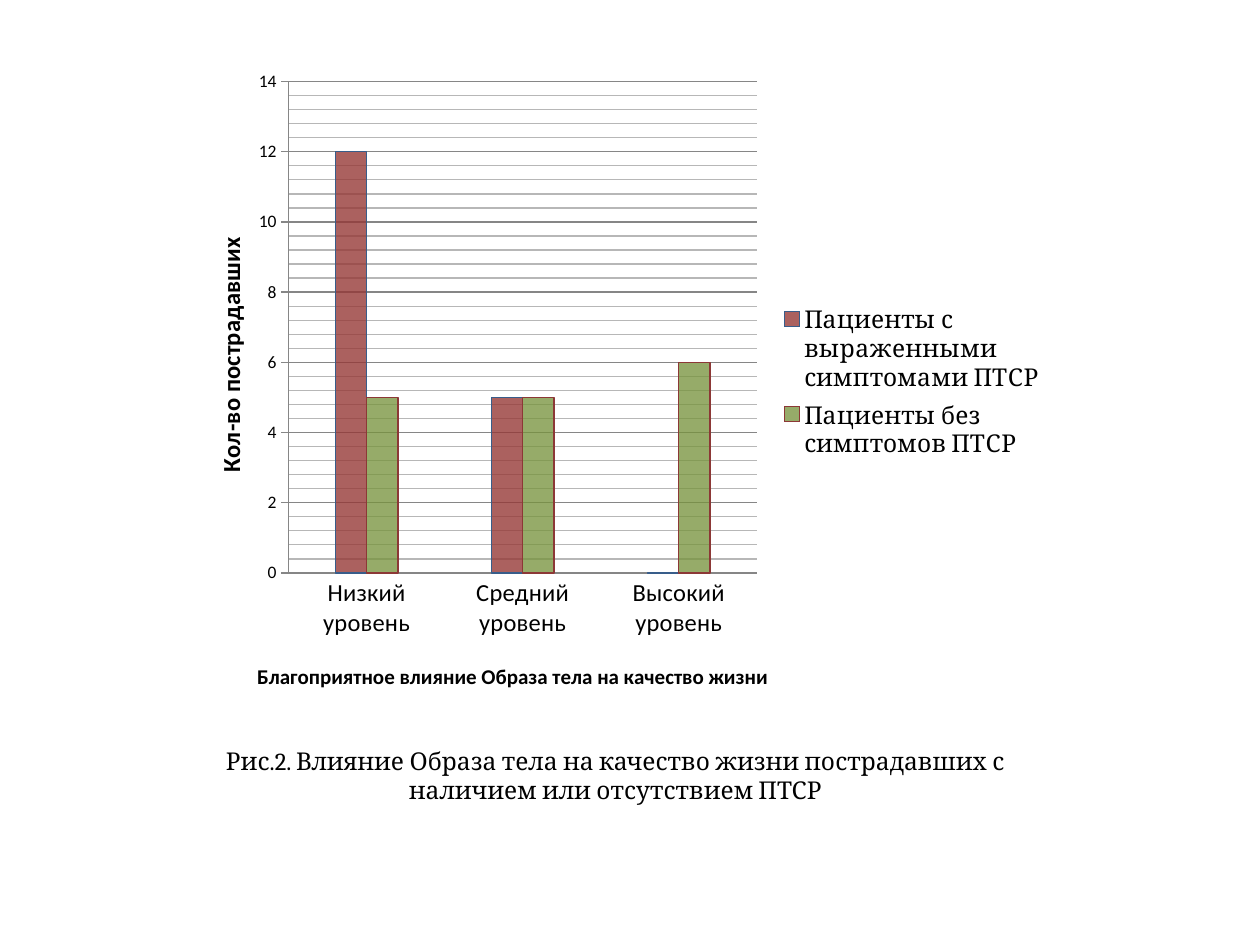
from dataclasses import dataclass

from lxml.etree import SubElement
from pptx import Presentation
from pptx.chart.data import CategoryChartData
from pptx.dml.color import RGBColor
from pptx.enum.chart import XL_CHART_TYPE as ChartType
from pptx.enum.chart import XL_LEGEND_POSITION as LegendPosition
from pptx.enum.chart import XL_TICK_MARK as TickMark
from pptx.enum.text import MSO_ANCHOR, PP_ALIGN
from pptx.oxml.ns import qn
from pptx.util import Inches, Pt

BLACK = "000000"
AXIS_GREY = "868686"
MINOR_GREY = "B7B7B7"
LEVELS = ["Низкий уровень", "Средний уровень", "Высокий уровень"]
CAPTION = "Рис.2. Влияние Образа тела на качество жизни пострадавших с наличием или отсутствием ПТСР"


@dataclass
class PatientGroup:
    name: str
    counts: tuple
    fill: str
    opacity: int
    outline: str


GROUPS = [
    PatientGroup("Пациенты с выраженными симптомами ПТСР", (12, 5, 0), "953735", 79, "385D8A"),
    PatientGroup("Пациенты без симптомов ПТСР", (5, 5, 6), "77933C", 77, "8C3836"),
]


def color(value: str) -> RGBColor:
    return RGBColor.from_string(value)


def set_font(font, size: float, name: str = "Calibri", bold: bool = False) -> None:
    for attribute, value in {"size": Pt(size), "name": name, "bold": bold}.items():
        setattr(font, attribute, value)
    font.color.rgb = color(BLACK)


def set_line(line, value: str, width: float = 0.75) -> None:
    line.color.rgb = color(value)
    line.width = Pt(width)


def place(element, index: int, **values) -> None:
    """Give a chart part a manual layout in fractions of the chart, as child number index."""
    for old in element.findall(qn("c:layout")):
        element.remove(old)
    layout = SubElement(element, qn("c:layout"))
    element.insert(index, layout)
    manual = SubElement(layout, qn("c:manualLayout"))
    for tag, value in values.items():
        SubElement(manual, qn(f"c:{tag}")).set("val", str(value))


def style_axis(axis, title: str, title_size: float, label_size: float, left: float, top: float) -> None:
    frame = axis.axis_title.text_frame
    frame.text = title
    set_font(frame.paragraphs[0].runs[0].font, title_size, bold=True)
    place(axis.axis_title._element, 1, xMode="edge", yMode="edge", x=left, y=top)
    set_font(axis.tick_labels.font, label_size)
    set_line(axis.format.line, AXIS_GREY)
    axis.minor_tick_mark = TickMark.NONE


def color_minor_gridlines(axis, value: str) -> None:
    element = axis._element.find(qn("c:minorGridlines"))
    for tag in ("c:spPr", "a:ln", "a:solidFill", "a:srgbClr"):
        element = SubElement(element, qn(tag))
    element.set("val", value)


def style_series(series, group: PatientGroup) -> None:
    series.invert_if_negative = False
    fill = series.format.fill
    fill.solid()
    fill.fore_color.rgb = color(group.fill)
    tint = series._element.find(".//" + qn("a:srgbClr"))
    SubElement(tint, qn("a:alpha")).set("val", str(group.opacity * 1000))
    set_line(series.format.line, group.outline)


def add_level_chart(page) -> None:
    data = CategoryChartData()
    data.categories = LEVELS
    for group in GROUPS:
        data.add_series(group.name, group.counts)
    chart = page.shapes.add_chart(
        ChartType.COLUMN_CLUSTERED, Inches(1.38), Inches(0.44), Inches(7.01), Inches(5.2), data
    ).chart
    set_font(chart.font, 10)
    chart.has_title = False

    plot = chart.plots[0]
    plot.gap_width, plot.overlap, plot.vary_by_categories = 300, 0, False
    for series, group in zip(plot.series, GROUPS):
        style_series(series, group)

    style_axis(chart.category_axis, "Благоприятное влияние Образа тела на качество жизни", 12, 14, 0.09, 0.92)
    chart.category_axis.major_tick_mark = TickMark.NONE

    counts = chart.value_axis
    style_axis(counts, "Кол-во пострадавших", 14, 10, 0.04, 0.27)
    scale = {"minimum_scale": 0, "maximum_scale": 14, "major_unit": 2, "minor_unit": 0.4,
             "has_major_gridlines": True, "has_minor_gridlines": True,
             "major_tick_mark": TickMark.OUTSIDE}
    for attribute, value in scale.items():
        setattr(counts, attribute, value)
    set_line(counts.major_gridlines.format.line, AXIS_GREY)
    color_minor_gridlines(counts, MINOR_GREY)

    chart.has_legend = True
    legend = chart.legend
    legend.position = LegendPosition.RIGHT
    legend.include_in_layout = False
    set_font(legend.font, 14, "Cambria")
    place(legend._element, 1, xMode="edge", yMode="edge", x=0.68, y=0.37, w=0.31, h=0.26)
    place(chart._chartSpace.chart.plotArea, 0, layoutTarget="inner", xMode="edge", yMode="edge",
          x=0.13, y=0.04, w=0.53, h=0.75)


def fill_caption(box) -> None:
    bounds = {"left": 1.38, "top": 5.87, "width": 7.01, "height": 0.88}
    for attribute, value in bounds.items():
        setattr(box, attribute, Inches(value))
    frame = box.text_frame
    frame.word_wrap = True
    frame.vertical_anchor = MSO_ANCHOR.TOP
    para = frame.paragraphs[0]
    para.alignment = PP_ALIGN.CENTER
    para.space_before = Pt(0)
    span = para.add_run()
    span.text = CAPTION
    set_font(span.font, 14, "Cambria")


def main() -> None:
    deck = Presentation()
    deck.slide_width, deck.slide_height = Inches(10), Inches(7.5)
    page = deck.slides.add_slide(deck.slide_layouts.get_by_name("Section Header"))
    title = page.shapes.title._element
    title.getparent().remove(title)
    fill_caption(page.placeholders[1])
    add_level_chart(page)
    deck.save("out.pptx")


if __name__ == "__main__":
    main()
